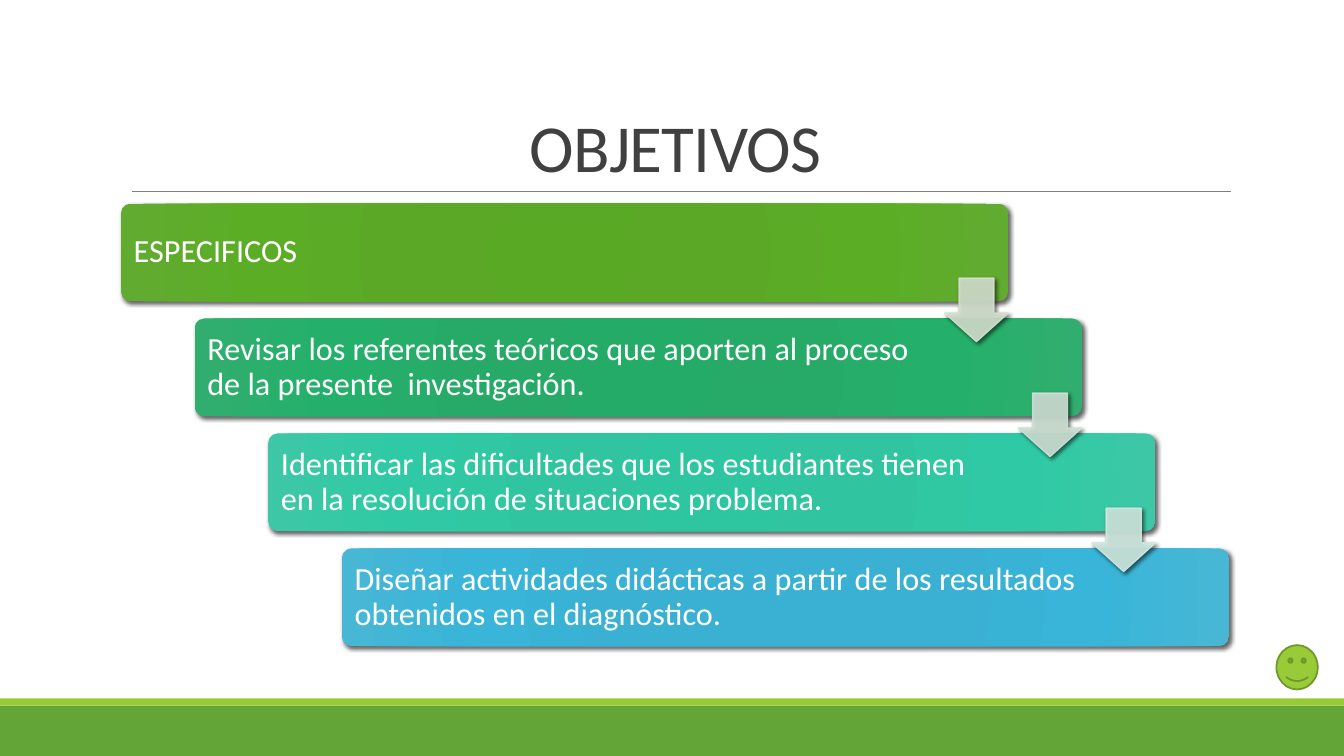
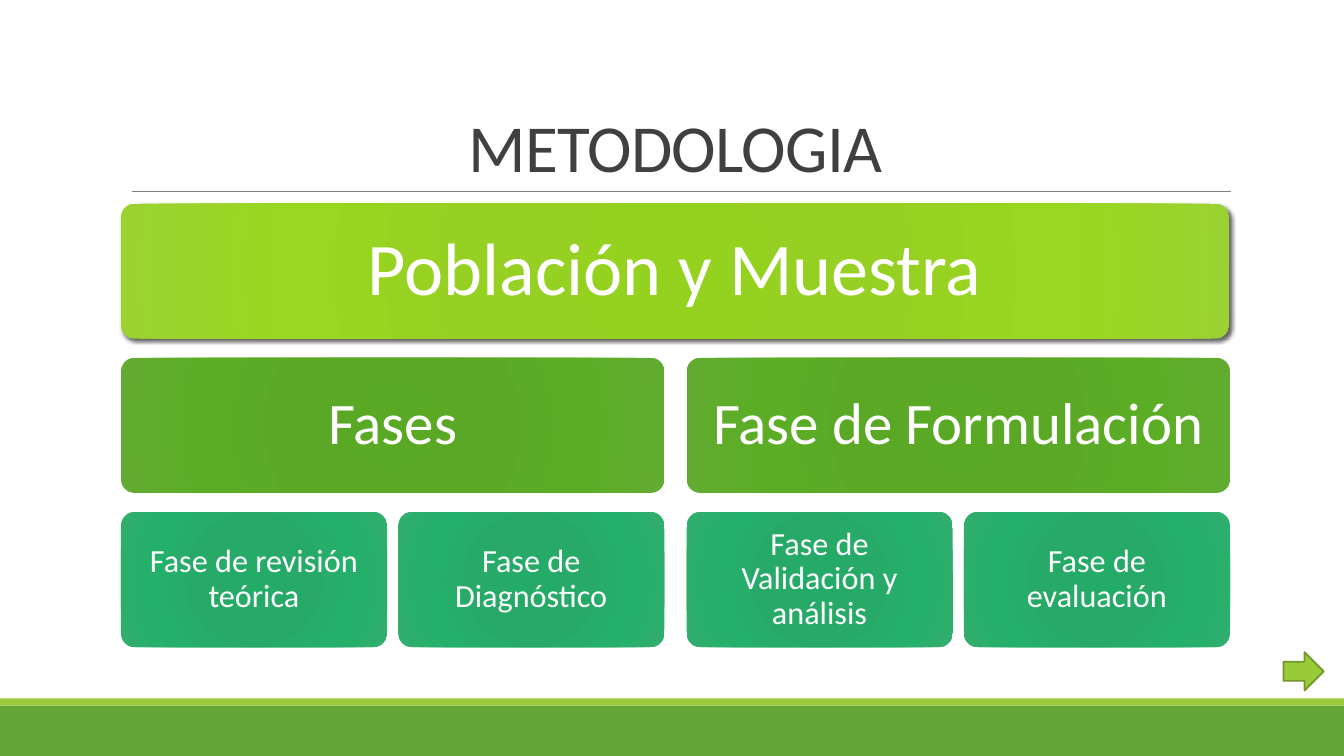
from lxml.etree import SubElement
from pptx import Presentation
from pptx.dml.color import RGBColor
from pptx.enum.shapes import MSO_CONNECTOR, MSO_SHAPE as SHAPE
from pptx.enum.text import MSO_ANCHOR as ANCHOR, MSO_AUTO_SIZE as FIT, PP_ALIGN as ALIGN
from pptx.oxml import parse_xml
from pptx.oxml.ns import nsdecls, qn
from pptx.util import Inches, Pt

FONT = "Calibri"
WHITE, INK, RULE = "FFFFFF", "404040", "808080"
GREEN, LIME, OLIVE = "63A537", "99CB38", "719629"

# Gradient colours, from the first stop to the last
STOPS = (0, 34, 70, 100)
LIMES = ("95D220", "96D023", "99D720", "9BD231")
GREENS = ("59A924", "5BA827", "5BAD25", "62AB31")
JADES = ("24AB67", "27AA68", "24B06A", "31AD6F")
TEALS = ("2EC5A1", "31C4A1", "2FCAA5", "3EC7A6")
BLUES = ("37B1D3", "3AB1D2", "38B5D8", "48B7D5")

LEFT, TOP = 1.2, 2.02

STEPS = [
    ("ESPECIFICOS", GREENS, "D3E1CE"),
    ("Revisar los referentes teóricos que aporten al proceso de la presente  investigación.",
     JADES, "CEE1D5"),
    ("Identificar las dificultades que los estudiantes tienen en la resolución "
     "de situaciones problema.", TEALS, "CFE9E0"),
    ("Diseñar actividades didácticas a partir de los resultados obtenidos en el diagnóstico.",
     BLUES, None),
]
PHASES = [
    ("Fases", ["Fase de revisión teórica", "Fase de Diagnóstico"]),
    ("Fase de Formulación", ["Fase de Validación y análisis", "Fase de evaluación"]),
]


def rgb(code):
    return RGBColor.from_string(code)


def add_form(slide, kind, box, fill=None, line=None, width=1):
    """Add a flat preset shape; box is left, top, width, height in inches."""
    form = slide.shapes.add_shape(kind, *map(Inches, box))
    form.shadow.inherit = False
    if fill:
        form.fill.solid()
        form.fill.fore_color.rgb = rgb(fill)
    else:
        form.fill.background()
    if line:
        form.line.color.rgb = rgb(line)
        form.line.width = Pt(width)
    else:
        form.line.fill.background()
    return form


def add_glow(form, colours):
    """Fill an unfilled form with a round gradient."""
    stops = "".join(
        f'<a:gs pos="{pos * 1000}"><a:srgbClr val="{code}"/></a:gs>'
        for pos, code in zip(STOPS, colours))
    grad = parse_xml(
        f'<a:gradFill {nsdecls("a")} rotWithShape="1"><a:gsLst>{stops}</a:gsLst>'
        '<a:path path="circle"><a:fillToRect l="100000" t="100000" r="100000" b="100000"/>'
        '</a:path></a:gradFill>')
    props = form.element.spPr
    props.replace(props.find(qn("a:noFill")), grad)


def add_shade(form):
    """Give a form a soft shadow to the lower right."""
    effects = form.element.spPr.find(qn("a:effectLst"))
    effects.append(parse_xml(
        f'<a:outerShdw {nsdecls("a")} blurRad="{Pt(3)}" dist="{Pt(2)}" dir="2700000" '
        'algn="ctr" rotWithShape="0"><a:srgbClr val="000000"><a:alpha val="60000"/>'
        '</a:srgbClr></a:outerShdw>'))


def set_text(frame, text, size, colour, align, spacing):
    frame.text = text
    frame.word_wrap = True
    frame.auto_size = FIT.NONE
    para = frame.paragraphs[0]
    para.alignment = align
    para.line_spacing = spacing
    font = para.font
    font.name, font.size, font.color.rgb = FONT, Pt(size), rgb(colour)


def add_card(slide, box, text, colours, size=23, inset=0.1, right=None,
             align=ALIGN.CENTER, shade=False):
    card = add_form(slide, SHAPE.ROUNDED_RECTANGLE, box)
    card.adjustments[0] = 0.1
    add_glow(card, colours)
    if shade:
        add_shade(card)
    frame = card.text_frame
    set_text(frame, text, size, WHITE, align, 0.9)
    frame.vertical_anchor = ANCHOR.MIDDLE
    frame.margin_left = frame.margin_top = frame.margin_bottom = Inches(inset)
    frame.margin_right = Inches(right or inset)


def add_arrow(slide, x, y, colour):
    """Add a translucent arrow that leads down to the next step."""
    arrow = add_form(slide, SHAPE.DOWN_ARROW, (x, y, 0.63, 0.63), colour, colour)
    arrow.adjustments[0], arrow.adjustments[1] = 0.55, 0.45
    for tint in arrow.element.spPr.iter(qn("a:srgbClr")):
        SubElement(tint, qn("a:alpha"), val="90000")
    add_shade(arrow)


def add_slide(deck, title):
    slide = deck.slides.add_slide(deck.slide_layouts[5])
    head = slide.shapes.title
    set_text(head.text_frame, title, 48, INK, ALIGN.CENTER, 0.85)
    for props in head.element.iter(qn("a:defRPr")):
        props.set("spc", "-50")
    return slide


def set_layout(deck, slide):
    """Place the title, and move the bands and the rule to the layout."""
    layout = slide.slide_layout
    for holder in list(layout.placeholders):
        if holder.placeholder_format.idx:
            holder.element.getparent().remove(holder.element)
    head = layout.placeholders[0]
    head.left, head.top, head.width, head.height = map(Inches, (LEFT, 0.31, 11, 1.59))
    head.text_frame.vertical_anchor = ANCHOR.BOTTOM

    wide = deck.slide_width.inches
    rule = slide.shapes.add_connector(
        MSO_CONNECTOR.STRAIGHT, *map(Inches, (1.31, 1.9, 12.21, 1.9)))
    rule.line.color.rgb = rgb(RULE)
    rule.line.width = Pt(0.5)
    SubElement(rule.element.spPr, qn("a:effectLst"))
    parts = [
        add_form(slide, SHAPE.RECTANGLE, (0, 7, wide, 0.5), GREEN),
        add_form(slide, SHAPE.RECTANGLE, (0, 6.93, wide, 0.07), LIME),
        rule,
    ]
    for part in parts:
        layout.shapes.element.append(part.element)


def add_goals(slide):
    wide, high = 8.8, 0.97
    spots = [(LEFT + 0.73 * i, TOP + 1.14 * i) for i in range(len(STEPS))]
    for (x, y), (text, colours, _) in zip(spots, STEPS):
        add_card(slide, (x, y, wide, high), text, colours,
                 right=1.45, align=ALIGN.LEFT, shade=True)
    for (x, y), (_, _, tint) in zip(spots, STEPS):
        if tint:
            add_arrow(slide, x + wide - 0.63, y + 0.74, tint)
    add_form(slide, SHAPE.SMILEY_FACE, (12.66, 6.4, 0.41, 0.44), LIME, OLIVE, 1.25)


def add_method(slide):
    high = 1.34
    rows = [TOP + 1.53 * i for i in range(3)]
    add_card(slide, (LEFT, rows[0], 10.99, high), "Población y Muestra", LIMES,
             53, 0.22, shade=True)
    for i, (phase, leaves) in enumerate(PHASES):
        x = LEFT + 5.61 * i
        add_card(slide, (x, rows[1], 5.39, high), phase, GREENS, 42, 0.17)
        for j, leaf in enumerate(leaves):
            add_card(slide, (x + 2.75 * j, rows[2], 2.64, high), leaf, JADES)
    add_form(slide, SHAPE.RIGHT_ARROW, (12.73, 6.47, 0.4, 0.38), LIME, OLIVE, 1.25)


def main():
    deck = Presentation()
    deck.slide_width, deck.slide_height = Inches(13.33), Inches(7.5)
    goals = add_slide(deck, "OBJETIVOS")
    set_layout(deck, goals)
    add_goals(goals)
    add_method(add_slide(deck, "METODOLOGIA"))
    deck.save("out.pptx")


if __name__ == "__main__":
    main()
